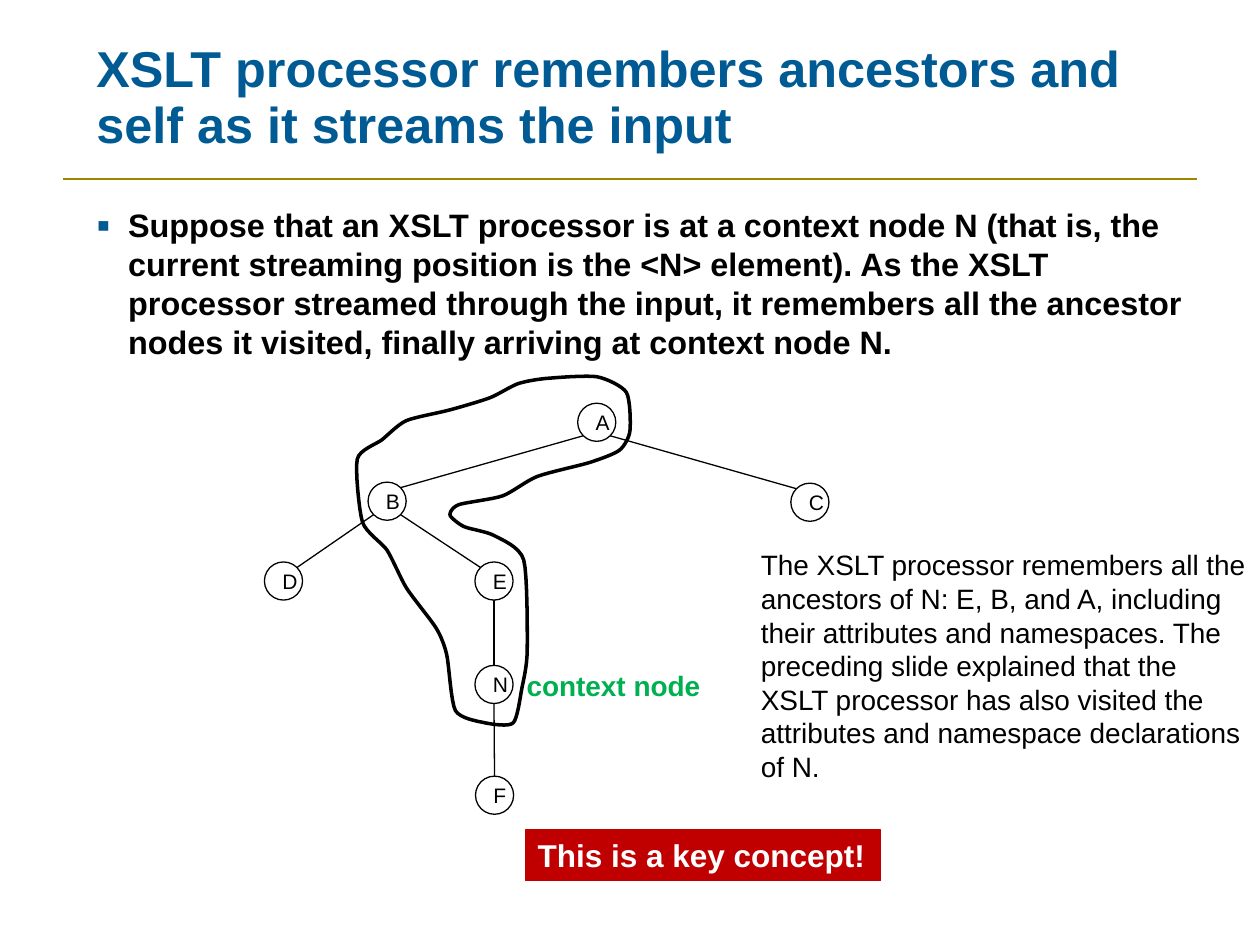
from lxml import etree
from pptx import Presentation
from pptx.dml.color import RGBColor
from pptx.enum import shapes, text
from pptx.oxml import ns
from pptx.util import Pt

THEME = {
    "font": "Arial", "title": "005B94", "ink": "000000", "paper": "FFFFFF",
    "rule": "9E8600", "context": "00B050", "key": "C00000",
    "title_size": 28.8, "body_size": 18.5, "key_size": 18, "note_size": 16, "node_size": 12,
    "thin": 0.75, "rule_width": 1, "loop_width": 2,
}

# Content
TITLE = "XSLT processor remembers ancestors and self as it streams the input"
BODY = ("Suppose that an XSLT processor is at a context node N (that is, the current "
        "streaming position is the <N> element). As the XSLT processor streamed through "
        "the input, it remembers all the ancestor nodes it visited, finally arriving at "
        "context node N.")
NOTE = ("The XSLT processor remembers all the ancestors of N: E, B, and A, including their "
        "attributes and namespaces. The preceding slide explained that the XSLT processor "
        "has also visited the attributes and namespace declarations of N.")
CONTEXT = "context node"
KEY = "This is a key concept!"

# Tree: centre of each node, then parent and child pairs
RADIUS = 10.9
NODES = {"A": (341, 241.3), "B": (221.2, 286.4), "C": (462.8, 287), "D": (162, 332),
         "E": (282.3, 332), "N": (282.3, 391.1), "F": (282.6, 454.4)}
EDGES = [("A", "B"), ("A", "C"), ("B", "D"), ("B", "E"), ("E", "N"), ("N", "F")]

# Loop around N and its ancestors, clockwise: offsets from the centre of the node it passes
LOOP = [
    ("A", [(0, -26), (17, -17), (19, 5), (13, 16), (-4, 23), (-34, 31)]),    # right end
    ("B", [(66, -3), (41, 2), (36, 8)]),                                     # inner bend
    ("E", [(-17, -31), (0, -26), (17, -12)]),                                # right of E
    ("N", [(19, -19), (16, 2), (11, 22), (-5, 22), (-22, 15), (-27, -17)]),  # under N
    ("E", [(-33, 27), (-50, 4)]),                                            # left of E
    ("B", [(0, 28), (-14, 12), (-17, -24), (-3, -35), (11, -46)]),           # around B
    ("A", [(-84, -7), (-61, -14), (-45, -22), (-29, -25)]),                  # back up to A
]
LOOP_STEPS = 8       # short segments between two neighbouring points
LOOP_TENSION = 0.35  # how far the curve swings through each point


def color(name):
    return RGBColor.from_string(THEME[name])


def write(shape, words, size, ink, bold=False, wrap=True):
    frame = shape.text_frame
    frame.word_wrap = wrap
    frame.text = words
    paragraph = frame.paragraphs[0]
    font = paragraph.runs[0].font
    font.name, font.size, font.bold = THEME["font"], Pt(THEME[size]), bold
    font.color.rgb = color(ink)
    return paragraph


def add_text(box, *args, **kwargs):
    return write(slide.shapes.add_textbox(*map(Pt, box)), *args, **kwargs)


def stroke(shape, ink, width):
    shape.line.color.rgb = color(ink)
    shape.line.width = Pt(THEME[width])


def add_shape(kind, box, fill, line):
    shape = slide.shapes.add_shape(kind, *map(Pt, box))
    shape.shadow.inherit = False
    shape.fill.solid()
    shape.fill.fore_color.rgb = color(fill)
    stroke(shape, line, "thin")
    return shape


def add_line(start, end, ink, width):
    line = slide.shapes.add_connector(shapes.MSO_CONNECTOR.STRAIGHT, *map(Pt, (*start, *end)))
    stroke(line, ink, width)
    etree.SubElement(line._element.spPr, ns.qn("a:effectLst"))


def edge_ends(parent, child):
    """Join facing rim points: straight down, or on the diagonals."""
    (px, py), (cx, cy) = NODES[parent], NODES[child]
    side = 0 if abs(cx - px) < RADIUS else (1 if cx > px else -1)
    reach = RADIUS * (0.71 if side else 1)
    return (px + side * reach, py + reach), (cx - side * reach, cy - reach)


def blend(before, start, end, after, t):
    """One coordinate of a smooth (cardinal) curve from start to end, with t from 0 to 1."""
    leave, arrive = LOOP_TENSION * (end - before), LOOP_TENSION * (after - start)
    return (start * (2 * t**3 - 3 * t**2 + 1) + leave * (t**3 - 2 * t**2 + t)
            + end * (3 * t**2 - 2 * t**3) + arrive * (t**3 - t**2))


def smooth_loop(points):
    """Sample a closed smooth curve through all points."""
    count = len(points)
    curve = []
    for i in range(count):
        neighbours = [points[(i + k) % count] for k in (-1, 0, 1, 2)]
        xs, ys = zip(*neighbours)
        for step in range(LOOP_STEPS):
            t = step / LOOP_STEPS
            curve.append((Pt(blend(*xs, t)), Pt(blend(*ys, t))))
    return curve


deck = Presentation()
deck.slide_width, deck.slide_height = Pt(720), Pt(540)
slide = deck.slides.add_slide(deck.slide_layouts[6])

# Title and rule
title = add_text((48, 21.6, 648, 68.4), TITLE, "title_size", "title", bold=True)
title.line_spacing = Pt(32)
slide.shapes[0].text_frame.vertical_anchor = text.MSO_ANCHOR.MIDDLE
add_line((36, 102.2), (684, 102.2), "rule", "rule_width")

# Bulleted statement
body = add_text((48.2, 113.8, 648, 90), BODY, "body_size", "ink", bold=True)
body.space_after = Pt(6)
bullet = body._p.get_or_add_pPr()
bullet.set("marL", str(Pt(18)))
bullet.set("indent", str(-Pt(18)))
bullet_color = etree.SubElement(bullet, ns.qn("a:buClr"))
etree.SubElement(bullet_color, ns.qn("a:srgbClr"), val=THEME["title"])
etree.SubElement(bullet, ns.qn("a:buSzPct"), val="120000")
etree.SubElement(bullet, ns.qn("a:buFont"), typeface=THEME["font"])
etree.SubElement(bullet, ns.qn("a:buChar"), char="▪")

# Tree
for parent, child in EDGES:
    add_line(*edge_ends(parent, child), "ink", "thin")
for letter, (x, y) in NODES.items():
    node = add_shape(shapes.MSO_SHAPE.OVAL,
                     (x - RADIUS, y - RADIUS, 2 * RADIUS, 2 * RADIUS), "paper", "ink")
    label = write(node, letter, "node_size", "ink")
    label.alignment = text.PP_ALIGN.CENTER
    node.text_frame.vertical_anchor = text.MSO_ANCHOR.MIDDLE

# Loop around the remembered nodes, and the label of the context node
loop_points = [(NODES[letter][0] + dx, NODES[letter][1] + dy)
               for letter, offsets in LOOP for dx, dy in offsets]
loop_start, *loop_rest = smooth_loop(loop_points)
pen = slide.shapes.build_freeform(*loop_start)
pen.add_line_segments(loop_rest, close=True)
loop = pen.convert_to_shape()
loop.shadow.inherit = False
loop.fill.background()
stroke(loop, "ink", "loop_width")
add_text((293.8, 378.7, 115.2, 26.6), CONTEXT, "note_size", "context", bold=True, wrap=False)

# Explanation and key message
add_text((427.7, 309.6, 292.3, 143.3), NOTE, "note_size", "ink")
key = add_shape(shapes.MSO_SHAPE.RECTANGLE, (300.2, 474.2, 203.2, 29), "key", "key")
message = write(key, KEY, "key_size", "paper", bold=True, wrap=False)
message.alignment = text.PP_ALIGN.LEFT

deck.save("out.pptx")
